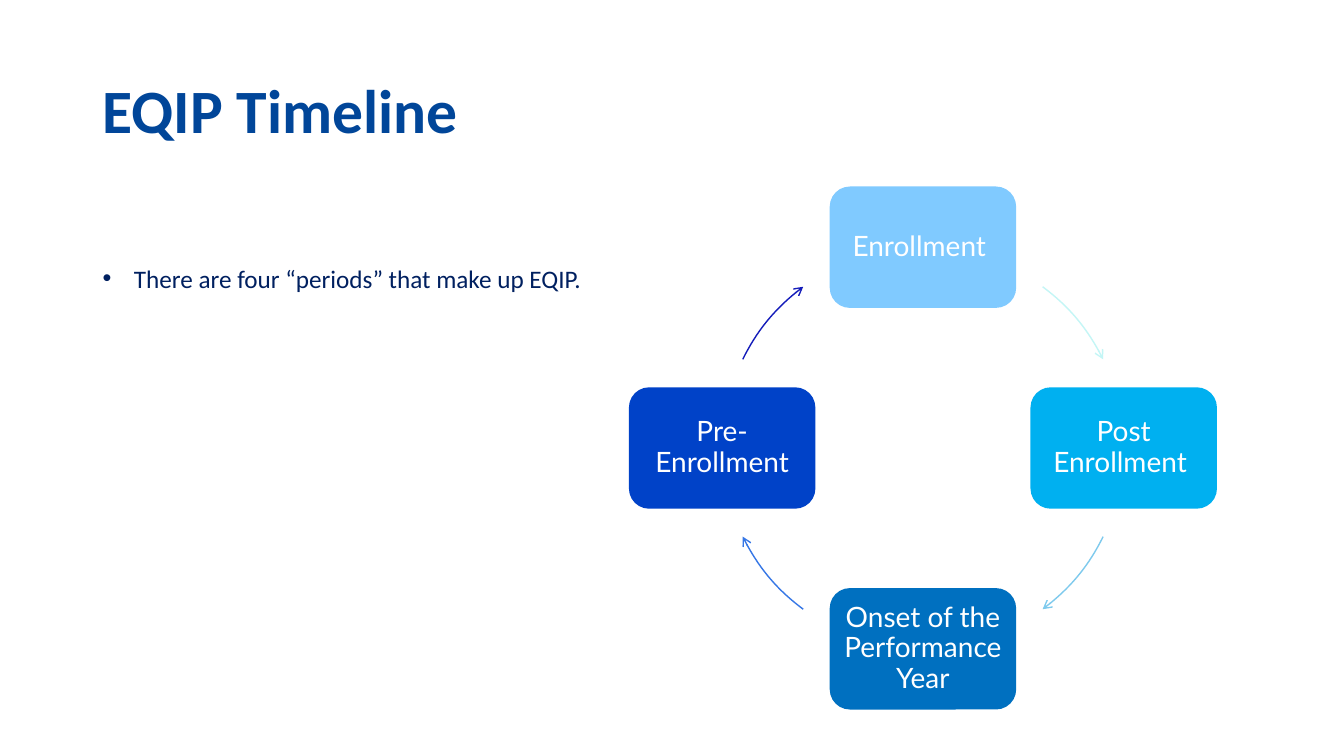
"""Build the EQIP timeline slide with its four-period cycle."""
import math

import lxml.etree
import pptx
import pptx.dml.color
import pptx.enum.shapes
import pptx.enum.text
import pptx.oxml.ns
import pptx.util

Cm = pptx.util.Cm
RGBColor = pptx.dml.color.RGBColor
PP_ALIGN = pptx.enum.text.PP_ALIGN
ANCHOR = pptx.enum.text.MSO_ANCHOR
AUTO_SIZE = pptx.enum.text.MSO_AUTO_SIZE
qn = pptx.oxml.ns.qn

TITLE_BLUE = RGBColor(0x01, 0x46, 0x99)
NAVY = RGBColor(0x00, 0x20, 0x60)
WHITE = RGBColor(0xFF, 0xFF, 0xFF)

CENTER_X, CENTER_Y, RADIUS = 23.26, 11.29, 5.06
BOX_W, BOX_H = 4.7, 3.06

PERIODS = [
    ("Enrollment ", RGBColor(0x80, 0xCA, 0xFF)),
    ("Post Enrollment ", RGBColor(0x00, 0xB0, 0xF0)),
    ("Onset of the Performance Year", RGBColor(0x00, 0x70, 0xC0)),
    ("Pre-Enrollment", RGBColor(0x00, 0x42, 0xC8)),
]
ARROWS = [
    (-53.4, -26.2, RGBColor(0xC4, 0xF6, 0xF6)),
    (26.2, 53.4, RGBColor(0x7E, 0xCA, 0xED)),
    (126.6, 153.8, RGBColor(0x36, 0x77, 0xE6)),
    (206.2, 233.4, RGBColor(0x14, 0x1C, 0xBA)),
]


def write(tf, text, *, size, font, color, bold=False, align=PP_ALIGN.LEFT,
          spacing=1.0, anchor=ANCHOR.MIDDLE, bullet=False):
    tf.word_wrap = True
    tf.vertical_anchor = anchor
    p = tf.paragraphs[0]
    if bullet:
        pPr = p._p.get_or_add_pPr()
        pPr.set("marL", str(Cm(0.79)))
        pPr.set("indent", str(-Cm(0.79)))
        lxml.etree.SubElement(pPr, qn("a:buFont")).set("typeface", "Arial")
        lxml.etree.SubElement(pPr, qn("a:buChar")).set("char", "•")
    p.alignment = align
    p.line_spacing = spacing
    p.space_before = pptx.util.Pt(0)
    r = p.add_run()
    r.text = text
    r.font.size = pptx.util.Pt(size)
    r.font.name = font
    r.font.bold = bold
    r.font.color.rgb = color


def on_circle(degrees, tangent=0):
    a = math.radians(degrees)
    dx = math.cos(a) - tangent * math.sin(a)
    dy = math.sin(a) + tangent * math.cos(a)
    return Cm(CENTER_X + RADIUS * dx), Cm(CENTER_Y + RADIUS * dy)


class Deck:
    def __init__(self):
        self.prs = pptx.Presentation()
        self.prs.slide_width = Cm(33.87)
        self.prs.slide_height = Cm(19.05)
        self.s = self.prs.slides.add_slide(self.prs.slide_layouts[1])
        self.heading_font = "Calibri"
        self.box_font = "Lato"

    def place(self, sp, left, top, width, height):
        sp.left, sp.top = Cm(left), Cm(top)
        sp.width, sp.height = Cm(width), Cm(height)

    def title(self, text):
        sp = self.s.shapes.title
        self.place(sp, 2.33, 1.01, 29.21, 3.68)
        write(sp.text_frame, text, size=44, font=self.heading_font,
              color=TITLE_BLUE, bold=True, spacing=0.9)

    def bullet(self, text):
        sp = self.s.placeholders[1]
        self.place(sp, 2.33, 6.5, 14.27, 1.03)
        sp.text_frame.auto_size = AUTO_SIZE.SHAPE_TO_FIT_TEXT
        write(sp.text_frame, text, size=18, font=self.heading_font,
              color=NAVY, anchor=ANCHOR.TOP, bullet=True)

    def period(self, text, degrees, color):
        x, y = on_circle(degrees)
        w, h = Cm(BOX_W), Cm(BOX_H)
        sp = self.s.shapes.add_shape(
            pptx.enum.shapes.MSO_SHAPE.ROUNDED_RECTANGLE,
            x - w // 2, y - h // 2, w, h)
        sp.shadow.inherit = False
        sp.fill.solid()
        sp.fill.fore_color.rgb = color
        sp.line.fill.background()
        tf = sp.text_frame
        tf.margin_left = tf.margin_right = Cm(0.2)
        tf.margin_top = tf.margin_bottom = Cm(0.2)
        write(tf, text, size=20, font=self.box_font, color=WHITE,
              align=PP_ALIGN.CENTER, spacing=0.9)

    def arrow(self, start, end, color):
        left, top = Cm(CENTER_X - RADIUS), Cm(CENTER_Y - RADIUS)
        builder = self.s.shapes.build_freeform(left, top)
        builder.add_line_segments(
            [(left + Cm(2 * RADIUS), top + Cm(2 * RADIUS))], close=False)
        sp = builder.convert_to_shape()
        self.bend(sp, start, end)
        sp.shadow.inherit = False
        sp.fill.background()
        sp.line.color.rgb = color
        sp.line.width = pptx.util.Pt(1)
        ln = sp.line._get_or_add_ln()
        lxml.etree.SubElement(ln, qn("a:tailEnd")).set("type", "arrow")

    def bend(self, sp, start, end):
        path = next(sp._element.iter(qn("a:path")))
        for child in list(path):
            path.remove(child)
        pull = 4 / 3 * math.tan(math.radians(end - start) / 4)
        curve = [on_circle(start, pull), on_circle(end, -pull), on_circle(end)]
        for tag, points in (("a:moveTo", [on_circle(start)]),
                            ("a:cubicBezTo", curve)):
            segment = lxml.etree.SubElement(path, qn(tag))
            for x, y in points:
                pt = lxml.etree.SubElement(segment, qn("a:pt"))
                pt.set("x", str(x - sp.left))
                pt.set("y", str(y - sp.top))


def main():
    deck = Deck()
    deck.title("EQIP Timeline")
    for i, (text, color) in enumerate(PERIODS):
        deck.period(text, -90 + 90 * i, color)
    for start, end, color in ARROWS:
        deck.arrow(start, end, color)
    deck.bullet("There are four “periods” that make up EQIP.")
    deck.prs.save("out.pptx")


if __name__ == "__main__":
    main()
